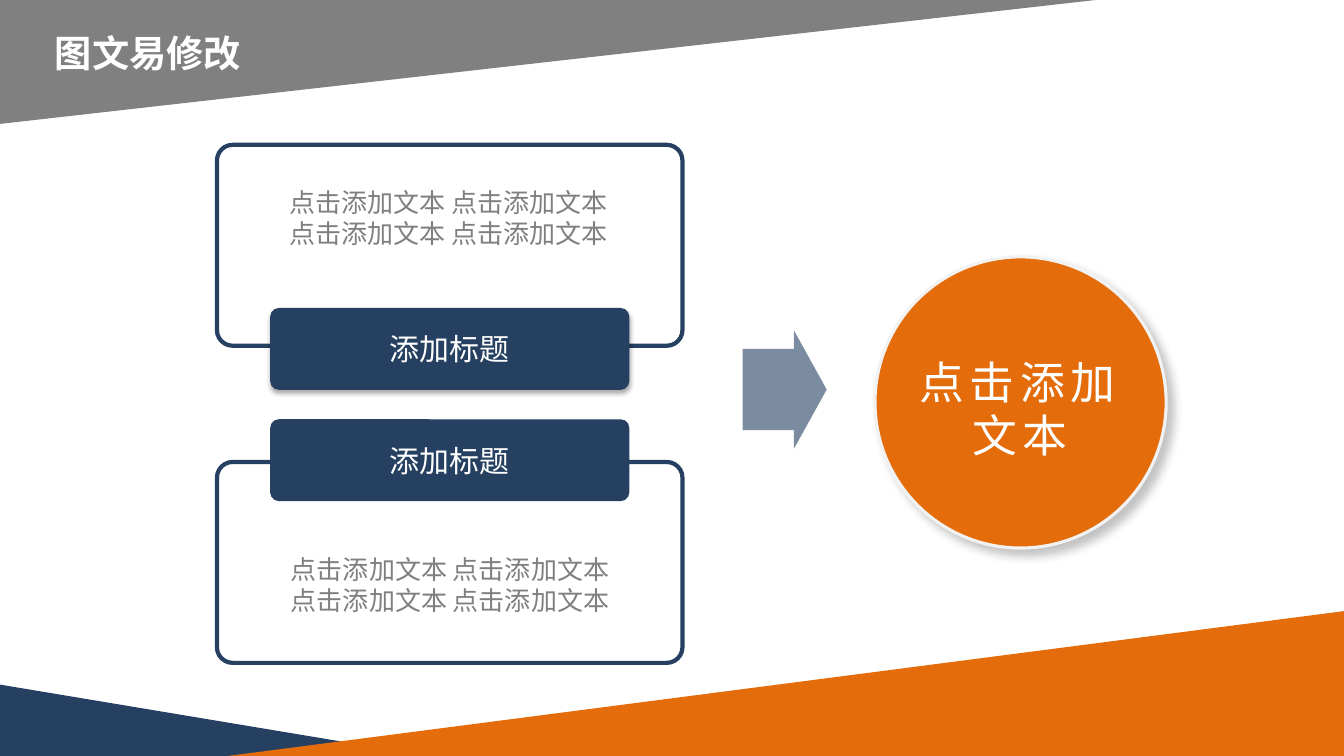
from dataclasses import dataclass

from lxml.etree import SubElement, fromstring
from pptx import Presentation
from pptx.dml.color import RGBColor
from pptx.enum.shapes import MSO_SHAPE as Preset
from pptx.enum.text import MSO_ANCHOR as Anchor, MSO_AUTO_SIZE as AutoSize, PP_ALIGN as Align
from pptx.oxml.ns import nsdecls, qn
from pptx.util import Pt


@dataclass(frozen=True)
class Theme:
    """Colours, font and type sizes of the slide."""
    navy: str = "254061"
    orange: str = "E46C0A"
    grey: str = "808080"
    body: str = "7F7F7F"
    pale: str = "F2F2F2"
    white: str = "FFFFFF"
    font: str = "Noto Sans CJK SC"
    title_size: float = 26.6
    body_size: float = 18.6
    label_size: float = 21.4
    circle_size: float = 32
    line_spacing: float = 1.2


THEME = Theme()


def shadow_effect(alpha, blur, distance, angle):
    """Return an effect list holding one black outer shadow."""
    return fromstring(
        f'<a:effectLst {nsdecls("a")}><a:outerShdw blurRad="{Pt(blur)}" dist="{Pt(distance)}" '
        f'dir="{angle * 60000}" algn="ctr" rotWithShape="0"><a:srgbClr val="000000">'
        f'<a:alpha val="{alpha * 1000}"/></a:srgbClr></a:outerShdw></a:effectLst>')


def add_preset(slide, preset, box, fill=None, line=None, line_width=0, adjustments=(), shadow=None):
    """Add a preset shape with its fill, outline, adjustments and shadow."""
    shape = slide.shapes.add_shape(preset, *map(Pt, box))
    for index, value in enumerate(adjustments):
        shape.adjustments[index] = value
    if fill:
        shape.fill.solid()
        shape.fill.fore_color.rgb = RGBColor.from_string(fill)
    else:
        shape.fill.background()
    if line:
        shape.line.color.rgb = RGBColor.from_string(line)
        shape.line.width = Pt(line_width)
    else:
        shape.line.fill.background()
    shape.shadow.inherit = False
    if shadow:
        properties = shape._element.spPr
        properties.replace(properties.find(qn("a:effectLst")), shadow_effect(*shadow))
    return shape


def add_triangle(slide, box, colour, flip=False, rotation=0):
    """Add a right triangle along an edge of the slide."""
    triangle = add_preset(slide, Preset.RIGHT_TRIANGLE, box, colour)
    triangle.rotation = rotation
    if flip:
        triangle._element.spPr.find(qn("a:xfrm")).set("flipH", "1")


def write_text(shape, text, size, colour, anchor=Anchor.TOP, bold=False, spacing=0, shadow=None):
    """Write centred text into a shape and format its runs."""
    frame = shape.text_frame
    frame.text = text
    frame.word_wrap = True
    frame.auto_size = AutoSize.NONE
    frame.vertical_anchor = anchor
    for paragraph in frame.paragraphs:
        paragraph.alignment = Align.CENTER
        paragraph.line_spacing = Pt(round(size * THEME.line_spacing, 1))
        for run in paragraph.runs:
            font = run.font
            font.name, font.size, font.bold = THEME.font, Pt(size), bold
            font.color.rgb = RGBColor.from_string(colour)
            properties = run._r.get_or_add_rPr()
            SubElement(properties, qn("a:ea")).set("typeface", THEME.font)
            if spacing:
                properties.set("spc", str(spacing * 100))
            if shadow:
                properties.find(qn("a:solidFill")).addnext(shadow_effect(*shadow))


def add_text(slide, box, text, size, colour, **options):
    """Add a text box."""
    write_text(slide.shapes.add_textbox(*map(Pt, box)), text, size, colour, **options)


def add_frame(slide, top, text_box):
    """Add an outlined panel with its two lines of text."""
    add_preset(slide, Preset.ROUNDED_RECTANGLE, (155, top, 332.5, 143.5),
               line=THEME.navy, line_width=3, adjustments=(0.078,))
    text = "\n".join(["点击添加文本 点击添加文本"] * 2)
    add_text(slide, text_box, text, THEME.body_size, THEME.body)


def add_label(slide, top, shadow=None):
    """Add a filled heading bar with its caption."""
    add_preset(slide, Preset.ROUNDED_RECTANGLE, (193, top, 256.5, 58.5),
               THEME.navy, adjustments=(0.106,), shadow=shadow)
    add_text(slide, (206.5, top + 12.75, 229.5, 33), "添加标题", THEME.label_size, THEME.white,
             anchor=Anchor.MIDDLE, shadow=(40, 3, 2, 45))


def add_arrow(slide):
    """Add the translucent arrow between panels and circle."""
    arrow = add_preset(slide, Preset.RIGHT_ARROW, (530.5, 236, 60, 84.5),
                       THEME.navy, adjustments=(0.686, 0.39))
    colour = arrow._element.spPr.find(qn("a:solidFill")).find(qn("a:srgbClr"))
    SubElement(colour, qn("a:alpha")).set("val", "60000")


def add_circle(slide):
    """Add the result circle with its text."""
    add_preset(slide, Preset.OVAL, (625, 183.5, 208, 208), THEME.orange,
               THEME.pale, 2.25, shadow=(23, 7, 5.9, 45))
    add_text(slide, (648.5, 249.5, 160.5, 85), "点击添加文本", THEME.circle_size,
             THEME.white, spacing=4)


def place_title(slide):
    """Move the title placeholder onto the header and format it."""
    title = slide.shapes.title
    title.left, title.top, title.width, title.height = map(Pt, (0, 21, 211.5, 32.5))
    write_text(title, "图文易修改", THEME.title_size, THEME.white, anchor=Anchor.MIDDLE, bold=True)
    frame = title.text_frame
    frame.margin_left = frame.margin_top = frame.margin_right = frame.margin_bottom = 0
    slide.shapes._spTree.append(title._element)


def main():
    """Build the slide and save it."""
    presentation = Presentation()
    presentation.slide_width, presentation.slide_height = Pt(960), Pt(540)
    slide = presentation.slides.add_slide(presentation.slide_layouts[5])
    add_triangle(slide, (0, 489, 306, 51), THEME.navy)
    add_triangle(slide, (162.5, 436.5, 797.5, 103.5), THEME.orange, flip=True)
    add_triangle(slide, (0, 0, 782.5, 88.5), THEME.grey, flip=True, rotation=180)
    add_arrow(slide)
    add_frame(slide, 330, (167, 391.5, 309, 52.5))
    add_frame(slide, 103.5, (157.5, 129.5, 326, 52.5))
    add_label(slide, 220, shadow=(32, 3.5, 2.2, 90))
    add_label(slide, 299.5)
    add_circle(slide)
    place_title(slide)
    presentation.save("out.pptx")


if __name__ == "__main__":
    main()
